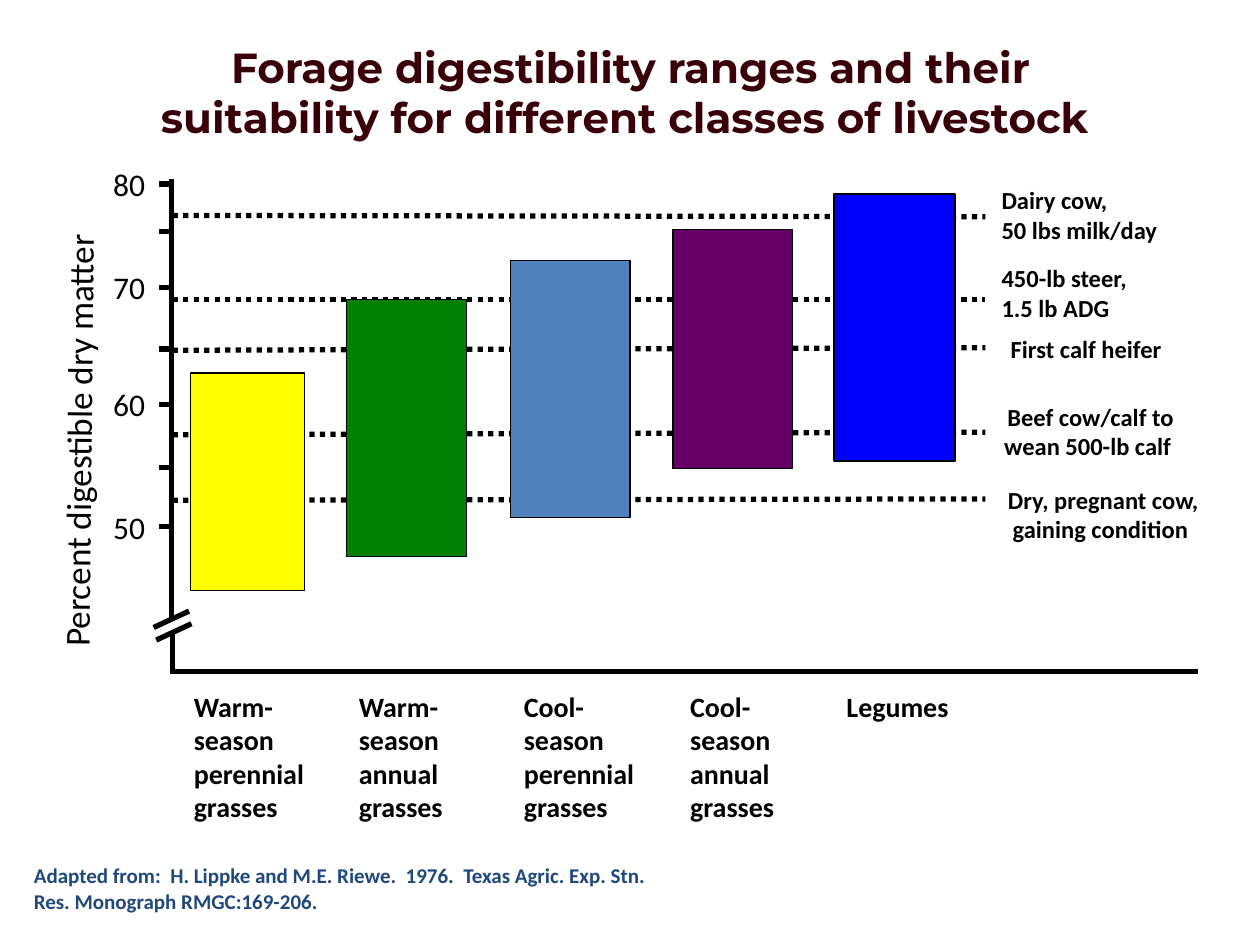
from copy import deepcopy

from lxml import etree
from pptx import Presentation
from pptx.dml.color import RGBColor
from pptx.enum.dml import MSO_LINE
from pptx.enum.shapes import MSO_CONNECTOR, MSO_SHAPE
from pptx.enum.text import PP_ALIGN
from pptx.oxml.ns import qn
from pptx.util import Inches, Pt

STRAIGHT = MSO_CONNECTOR.STRAIGHT
RECT = MSO_SHAPE.RECTANGLE
DOTTED = MSO_LINE.ROUND_DOT
LEFT, CENTER = PP_ALIGN.LEFT, PP_ALIGN.CENTER

COLS, ROWS = 100, 75  # grid cells across and down the slide


def rgb(value):
    return RGBColor.from_string(value)


class ChartSlide:
    """Style and current slide; all positions are in grid columns and rows."""

    black = "000000"
    font = "Calibri"
    axis_width = 3
    bar_outline = 0.75

    def __init__(self, prs):
        self.col = prs.slide_width / COLS
        self.row = prs.slide_height / ROWS
        self.s = prs.slides.add_slide(prs.slide_layouts[6])

    def place(self, x, y, w, h):
        return (round(x * self.col), round(y * self.row),
                round(w * self.col), round(h * self.row))

    def line(self, x1, y1, x2, y2, dash=None):
        ends = self.place(x1, y1, x2, y2)
        ln = self.s.shapes.add_connector(STRAIGHT, *ends)
        ln.line.color.rgb = rgb(self.black)
        ln.line.width = Pt(self.axis_width)
        if dash:
            ln.line.dash_style = dash
        etree.SubElement(ln._element.spPr, qn("a:effectLst"))

    def bar(self, x, y, w, h, color):
        sp = self.s.shapes.add_shape(RECT, *self.place(x, y, w, h))
        sp.shadow.inherit = False
        sp.fill.solid()
        sp.fill.fore_color.rgb = rgb(color)
        sp.line.color.rgb = rgb(self.black)
        sp.line.width = Pt(self.bar_outline)

    def text(self, x, y, w, h, text, size, color=black, align=LEFT,
             rotation=0, **style):
        sp = self.s.shapes.add_textbox(*self.place(x, y, w, h))
        sp.rotation = rotation
        tf = sp.text_frame
        tf.word_wrap = True
        p = tf.paragraphs[0]
        p.text = text
        p.alignment = align
        formats = {"name": self.font, "size": Pt(size), "bold": False, **style}
        for r in p.runs:
            for key, value in formats.items():
                setattr(r.font, key, value)
            r.font.color.rgb = rgb(color)
        # Line breaks take the size of the text around them
        for br in p._p.findall(qn("a:br")):
            br.insert(0, deepcopy(p.runs[0]._r.rPr))


# Tick rows and the number beside each, if any
TICKS = [(14.6, "80"), (18.4, ""), (22.8, "70"), (27.7, ""),
         (32.1, "60"), (37.1, ""), (41.8, "50")]

# Dotted line: start and end rows; label: left, top, width, height
CLASSES = [
    ("Dairy cow, \n50 lbs milk/day", 17.1, 17.2, (78.5, 14.2, 16.8, 5.7), LEFT),
    ("450-lb steer, \n1.5 lb ADG", 23.8, 23.8, (78.5, 20.4, 14.2, 5.7), LEFT),
    ("First calf heifer", 27.8, 27.6, (77.2, 26, 18, 3.3), CENTER),
    ("Beef cow/calf to\nwean 500-lb calf ", 34.5, 34.3,
     (76, 31.4, 21.1, 5.7), CENTER),
    ("Dry, pregnant cow,\ngaining condition ", 39.7, 39.6,
     (77.6, 38, 19.9, 5.7), CENTER),
]

# Bar: left, top, width, height, colour; label left
FORAGES = [
    ("Warm-\nseason\nperennial\ngrasses", (15.1, 29.6, 9.1, 17.3), "FFFF00", 14.4),
    ("Warm-\nseason\nannual\ngrasses", (27.5, 23.8, 9.5, 20.4), "008000", 27.5),
    ("Cool-\nseason\nperennial\ngrasses", (40.5, 20.7, 9.5, 20.4), "4F81BD", 40.6),
    ("Cool-\nseason\nannual\ngrasses", (53.4, 18.2, 9.5, 19), "660066", 53.8),
    ("Legumes", (66.2, 15.4, 9.6, 21.2), "0000FF", 66.2),
]


def main():
    prs = Presentation()
    prs.slide_width, prs.slide_height = Inches(10), Inches(7.5)
    chart = ChartSlide(prs)

    # Title
    chart.text(8.4, 2.8, 83.3, 9.1,
               "Forage digestibility ranges and their suitability "
               "for different classes of livestock ",
               24, "390009", CENTER, name="Montserrat", bold=True)

    # Requirement of each livestock class
    for label, start, end, box, align in CLASSES:
        chart.line(13.7, start, 78.2, end, DOTTED)
        chart.text(*box, label, 14, align=align, bold=True)

    # Digestibility range of each forage
    for label, box, color, left in FORAGES:
        chart.bar(*box, color)
        chart.text(left, 54.2, 12.6, 11.7, label, 16, bold=True)

    # Axes, with the break in the vertical one
    chart.line(13.6, 14.2, 13.6, 49.1)
    chart.line(13.7, 50.3, 13.7, 53.5)
    chart.line(13.6, 53.3, 95.1, 53.3)
    chart.line(15, 48.5, 12.2, 49.8)
    chart.line(15.2, 49.5, 12.4, 50.8)

    # Ticks and scale
    for y, number in TICKS:
        chart.line(12.6, y, 13.5, y)
        if number:
            chart.text(8, y - 2, 5.9, 4, number, 18)
    chart.text(-12.6, 31.4, 37.5, 4.3, "Percent digestible dry matter", 20,
               rotation=270.5)

    # Source
    chart.text(1.7, 68, 51.5, 5,
               "Adapted from:  H. Lippke and M.E. Riewe.  1976.  "
               "Texas Agric. Exp. Stn. Res. Monograph RMGC:169-206.",
               12, "1F497D", bold=True)

    prs.save("out.pptx")


if __name__ == "__main__":
    main()
